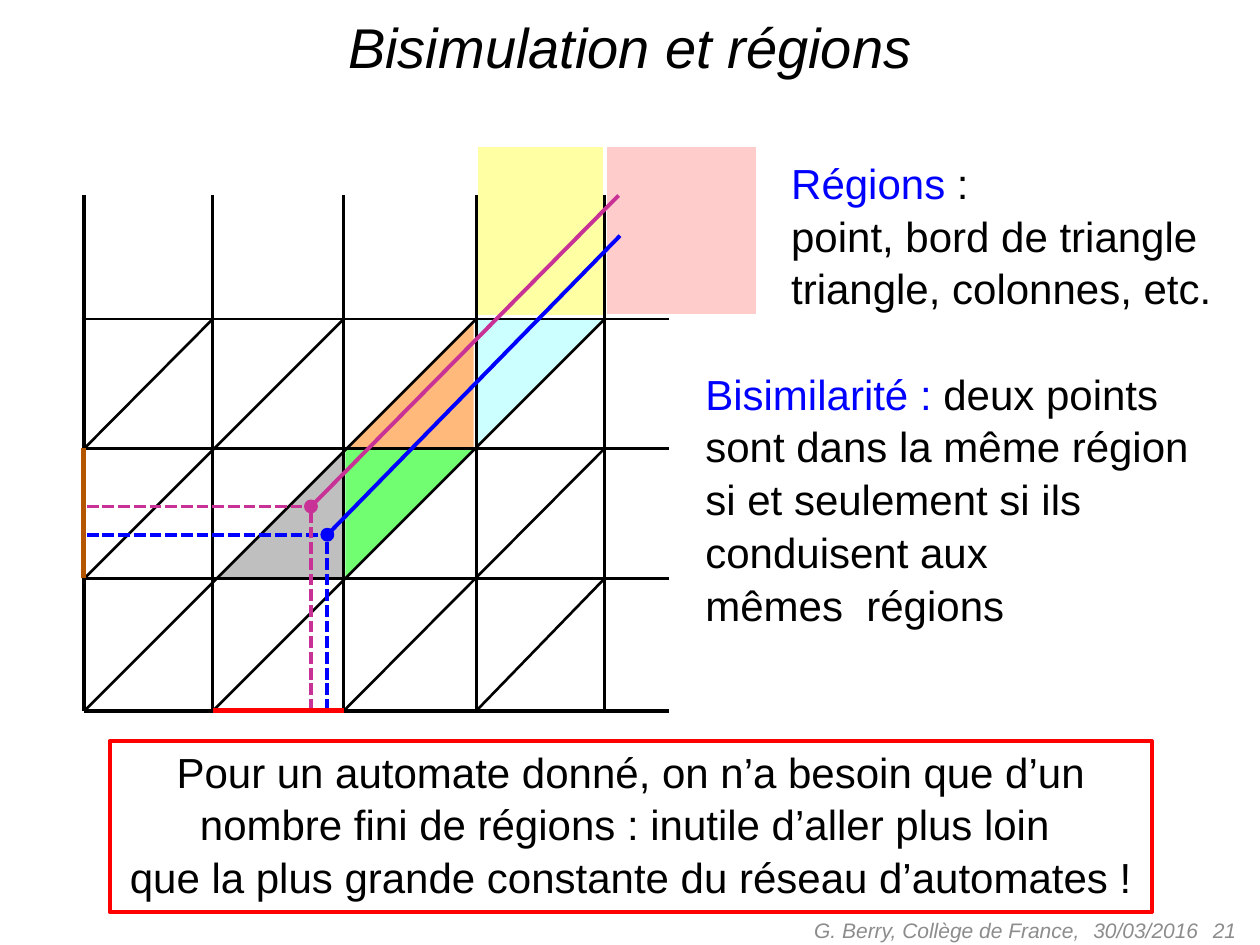
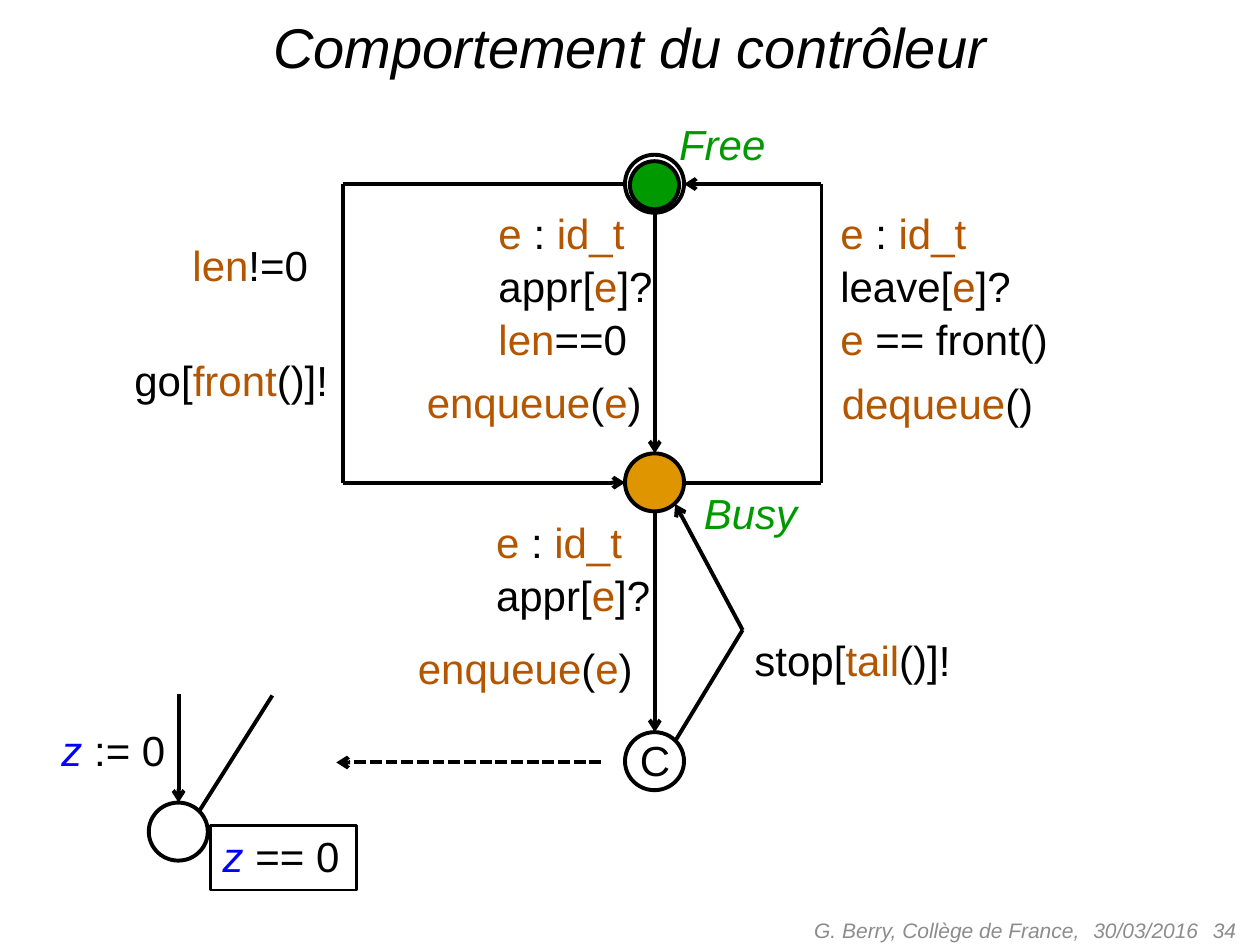
"""Builds two lecture slides: time regions with bisimulation, and a controller automaton."""
from lxml import etree
from pptx import Presentation
from pptx.dml.color import RGBColor
from pptx.enum import dml, shapes, text
from pptx.oxml import ns
from pptx.util import Cm, Pt

BLACK = RGBColor(0x00, 0x00, 0x00)
WHITE = RGBColor(0xFF, 0xFF, 0xFF)
GREY = RGBColor(0x8C, 0x8C, 0x8C)
BLUE = RGBColor(0x00, 0x00, 0xFF)
MAGENTA = RGBColor(0xC8, 0x32, 0x96)
RED = RGBColor(0xFF, 0x00, 0x00)
BROWN = RGBColor(0xB4, 0x56, 0x00)
GREEN = RGBColor(0x00, 0x9A, 0x00)
AMBER = RGBColor(0xDE, 0x95, 0x00)
PINK = RGBColor(0xFF, 0xCC, 0xCC)
YELLOW = RGBColor(0xFF, 0xFF, 0xA3)
CYAN = RGBColor(0xCC, 0xFF, 0xFF)
LIME = RGBColor(0x71, 0xFF, 0x71)
ORANGE = RGBColor(0xFF, 0xBA, 0x7B)
SILVER = RGBColor(0xBF, 0xBF, 0xBF)

LEFT, CENTER, RIGHT = text.PP_ALIGN.LEFT, text.PP_ALIGN.CENTER, text.PP_ALIGN.RIGHT
TOP, MIDDLE = text.MSO_ANCHOR.TOP, text.MSO_ANCHOR.MIDDLE
OVAL = shapes.MSO_SHAPE.OVAL


def write(slide, place, paragraphs, align=LEFT, wrap=False, size=24,
          spacing=1.05, insets=(0.05, 0.18), anchor=TOP):
    box = slide.shapes.add_textbox(*map(Cm, place))
    frame = box.text_frame
    frame.word_wrap = wrap
    frame.vertical_anchor = anchor
    frame.margin_left = frame.margin_right = Cm(0.25)
    frame.margin_top, frame.margin_bottom = map(Cm, insets)
    for index, runs in enumerate(paragraphs):
        paragraph = frame.add_paragraph() if index else frame.paragraphs[0]
        paragraph.alignment = align
        paragraph.line_spacing = spacing
        for words, colour, *slant in runs:
            run = paragraph.add_run()
            run.text = words
            run.font.name = "Arial"
            run.font.size = Pt(size)
            run.font.italic = bool(slant)
            run.font.color.rgb = colour
    return box


def draw(slide, start, end, colour=BLACK, width=2.25, dashed=False, arrow=False):
    line = slide.shapes.add_connector(
        shapes.MSO_CONNECTOR.STRAIGHT, *map(Cm, (*start, *end)))
    line.line.color.rgb = colour
    line.line.width = Pt(width)
    if dashed:
        line.line.dash_style = dml.MSO_LINE.SQUARE_DOT
    properties = line.element.spPr
    if arrow:
        etree.SubElement(properties.find(ns.qn("a:ln")), ns.qn("a:tailEnd"), type="arrow")
    etree.SubElement(properties, ns.qn("a:effectLst"))


deck = Presentation()
deck.slide_width, deck.slide_height = Cm(25.4), Cm(19.05)

slides = []
for title, number in (("Bisimulation et régions", "21"),
                      ("Comportement du contrôleur", "34")):
    slide = deck.slides.add_slide(deck.slide_layouts[6])
    write(slide, (0.64, 0.13, 24.13, 1.63), [[(title, BLACK, "italic")]], CENTER, True,
          size=32, spacing=1.0, insets=(0.13, 0.13))
    for words, left, width, align in (("30/03/2016", 21.79, 3.5, LEFT),
                                      (number, 19.25, 5.92, RIGHT),
                                      ("G. Berry, Collège de France,", 13.97, 8.05, RIGHT)):
        write(slide, (left, 18.24, width, 1.02), [[(words, GREY, "italic")]], align, True,
              size=12, spacing=1.0, insets=(0.13, 0.13), anchor=MIDDLE)
    slides.append(slide)
regions, controller = slides

columns = (1.7, 4.29, 6.93, 9.6, 12.19)
rows = (14.33, 11.66, 9.04, 6.43)
grid_top, grid_right = 3.94, 13.49

for left, top, width, height, tint in ((12.17, 2.92, 3.12, 3.45, PINK),
                                       (9.6, 2.92, 2.59, 3.48, YELLOW)):
    band = regions.shapes.add_shape(
        shapes.MSO_SHAPE.RECTANGLE, *map(Cm, (left, top, width, height)))
    band.shadow.inherit = False
    band.fill.solid()
    band.fill.fore_color.rgb = tint
    band.line.color.rgb = WHITE
    band.line.width = Pt(2.25)

for left, top, turn, tint in ((9.6, 6.43, 90, CYAN), (6.96, 9.04, 90, LIME),
                              (6.96, 6.48, 270, ORANGE), (4.34, 9.07, 270, SILVER)):
    triangle = regions.shapes.add_shape(
        shapes.MSO_SHAPE.RIGHT_TRIANGLE, *map(Cm, (left, top, 2.59, 2.59)))
    triangle.shadow.inherit = False
    triangle.rotation = turn
    triangle.fill.solid()
    triangle.fill.fore_color.rgb = tint
    triangle.line.fill.background()

for index, x in enumerate(columns):
    draw(regions, (x, grid_top), (x, rows[0]), width=1.5 if index else 2.25)
for index, y in enumerate(rows):
    draw(regions, (grid_right, y), (columns[0], y), width=1.5 if index else 2.25)
for column, row in ((0, 0), (1, 0), (2, 0), (3, 0), (0, 1), (0, 2)):
    steps = min(4 - column, 3 - row)
    draw(regions, (columns[column], rows[row]),
         (columns[column + steps], rows[row + steps]), width=1.5)

for x, y, far_end, colour in ((6.6, 10.78, (12.5, 4.75), BLUE),
                              (6.27, 10.21, (12.47, 3.94), MAGENTA)):
    draw(regions, (x, y), far_end, colour)
    draw(regions, (x, rows[0]), (x, y), colour, dashed=True)
    draw(regions, (columns[0] + 0.05, y), (x, y), colour, dashed=True)
    point = regions.shapes.add_shape(OVAL, *map(Cm, (x - 0.1, y - 0.1, 0.2, 0.2)))
    point.shadow.inherit = False
    point.fill.solid()
    point.fill.fore_color.rgb = colour
    point.line.color.rgb = colour
    point.line.width = Pt(2.25)

draw(regions, (columns[1], rows[0]), (columns[2], rows[0]), RED, 3)
draw(regions, (1.68, rows[1]), (1.68, rows[2]), BROWN, 3)

write(regions, (15.7, 3.07, 9.07, 3.45), [
    [("Régions", BLUE), (" :", BLACK)],
    [("point, bord de triangle", BLACK)],
    [("triangle, colonnes, etc.", BLACK)]])
write(regions, (13.97, 7.32, 10.34, 6.68), [
    [("Bisimilarité : ", BLUE), ("deux points", BLACK)],
    [("sont dans la même région", BLACK)],
    [("si et seulement si ils", BLACK)],
    [("conduisent aux", BLACK)],
    [("mêmes  régions", BLACK)]])
conclusion = write(regions, (2.21, 14.94, 21.01, 3.45), [
    [("Pour un automate donné, on n’a besoin que d’un nombre fini de régions : "
      "inutile d’aller plus loin ", BLACK)],
    [("que la plus grande constante du réseau d’automates !", BLACK)]], CENTER, True)
conclusion.line.color.rgb = RED
conclusion.line.width = Pt(2.25)

axis, free_y, busy_y = 13.2, 3.71, 9.73
loop_left, loop_right = 6.92, 16.56
state_left, state_right = 12.6, 13.79

for left, top, width, height, tint in ((state_left, 3.12, 1.19, 1.17, None),
                                       (12.7, 3.25, 0.99, 0.97, GREEN),
                                       (state_left, 9.14, 1.19, 1.17, AMBER),
                                       (state_left, 14.76, 1.19, 1.17, None),
                                       (3.0, 16.18, 1.19, 1.17, None)):
    state = controller.shapes.add_shape(OVAL, *map(Cm, (left, top, width, height)))
    state.shadow.inherit = False
    if tint is None:
        state.fill.background()
    else:
        state.fill.solid()
        state.fill.fore_color.rgb = tint
    state.line.color.rgb = BLACK
    state.line.width = Pt(2.25)

for start, end in (((loop_left, free_y), (state_left, free_y)),
                   ((loop_left, free_y), (loop_left, busy_y)),
                   ((state_right, busy_y), (loop_right, busy_y)),
                   ((loop_right, busy_y), (loop_right, free_y)),
                   ((13.61, 14.94), (14.97, 12.7)),
                   ((4.01, 16.36), (5.49, 14.02))):
    draw(controller, start, end)
for start, end in (((loop_left, busy_y), (state_left, busy_y)),
                   ((loop_right, free_y), (state_right, free_y)),
                   ((axis, 4.3), (axis, 9.14)),
                   ((axis, 10.31), (axis, 14.76)),
                   ((14.97, 12.7), (13.61, 10.16)),
                   ((3.6, 14.0), (3.6, 16.18))):
    draw(controller, start, end, arrow=True)
draw(controller, (12.12, 15.37), (6.78, 15.37), dashed=True, arrow=True)

car = [("e ", BROWN), (": ", BLACK), ("id_t", BROWN)]
approach = [("appr[", BLACK), ("e", BROWN), ("]?", BLACK)]
leave = [("leave[", BLACK), ("e", BROWN), ("]?", BLACK)]
enqueue = [("enqueue", BROWN), ("(", BLACK), ("e", BROWN), (")", BLACK)]

for place, paragraphs in (
        ((9.8, 4.09, 3.66, 3.45), [car, approach, [("len", BROWN), ("==0", BLACK)]]),
        ((9.75, 10.31, 3.66, 2.36), [car, approach]),
        ((16.69, 4.09, 4.75, 3.45), [car, leave, [("e", BROWN), (" == front()", BLACK)]]),
        ((3.63, 4.72, 2.87, 1.3), [[("len", BROWN), ("!=0", BLACK)]]),
        ((2.46, 7.04, 4.45, 1.3), [[("go[", BLACK), ("front", BROWN), ("()]!", BLACK)]]),
        ((14.96, 12.7, 4.5, 1.3), [[("stop[", BLACK), ("tail", BROWN), ("()]!", BLACK)]]),
        ((13.44, 2.29, 2.49, 1.3), [[("Free", GREEN, "italic")]]),
        ((13.94, 9.73, 2.62, 1.3), [[("Busy", GREEN, "italic")]]),
        ((0.99, 14.5, 2.67, 1.3), [[("z ", BLUE, "italic"), (":= 0", BLACK)]])):
    write(controller, place, paragraphs)
for place, action in (((8.33, 7.49, 4.88, 1.3), enqueue),
                      ((8.15, 12.85, 4.88, 1.3), enqueue),
                      ((16.69, 7.52, 4.42, 1.3), [("dequeue", BROWN), ("()", BLACK)])):
    write(controller, place, [action], CENTER)
write(controller, (12.65, 14.71, 0.74, 1.3), [[("C", BLACK)]], wrap=True)
invariant = write(controller, (4.24, 16.64, 2.95, 1.3),
                  [[("z ", BLUE, "italic"), ("== 0", BLACK)]])
invariant.line.color.rgb = BLACK
invariant.line.width = Pt(1.5)

deck.save("out.pptx")
